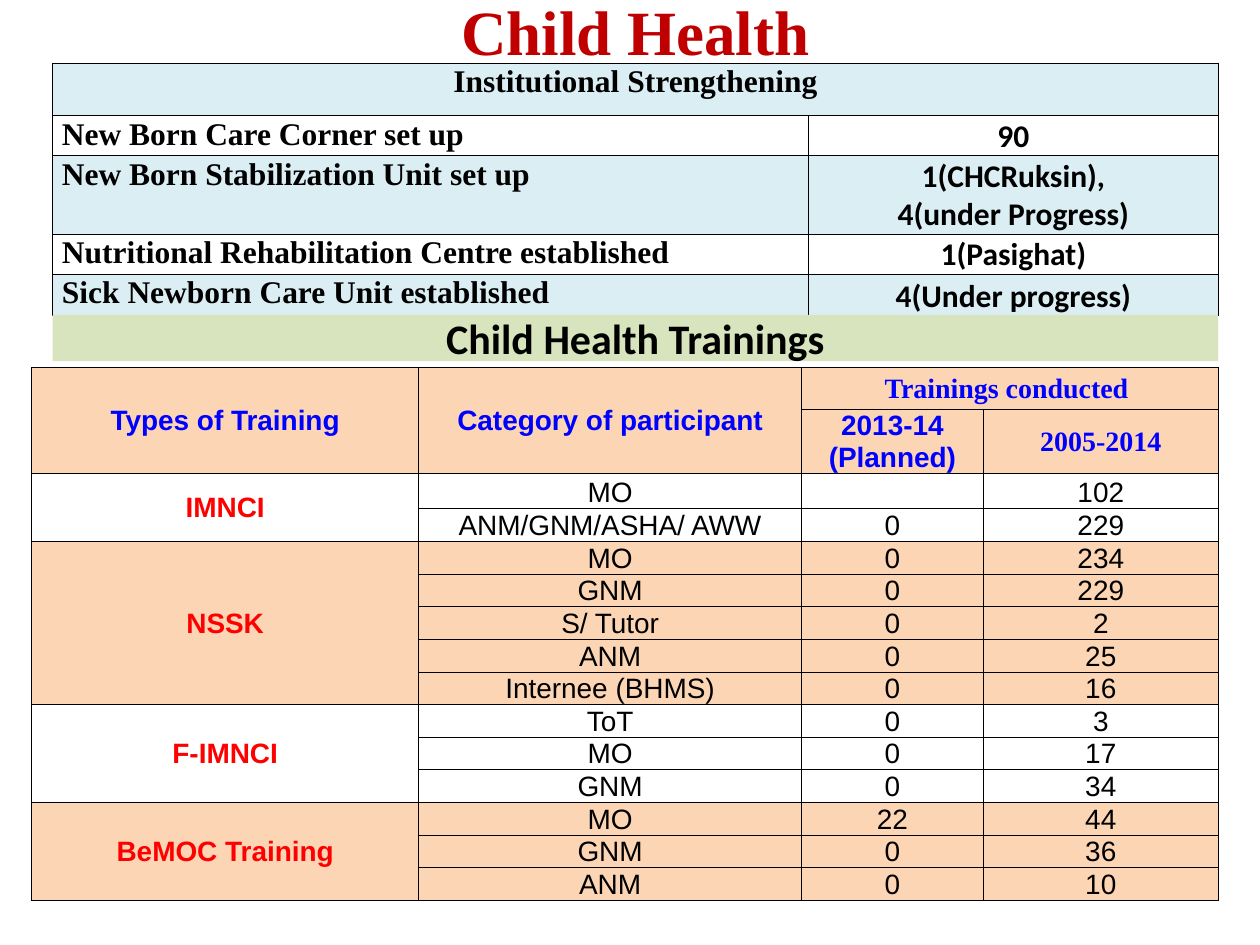
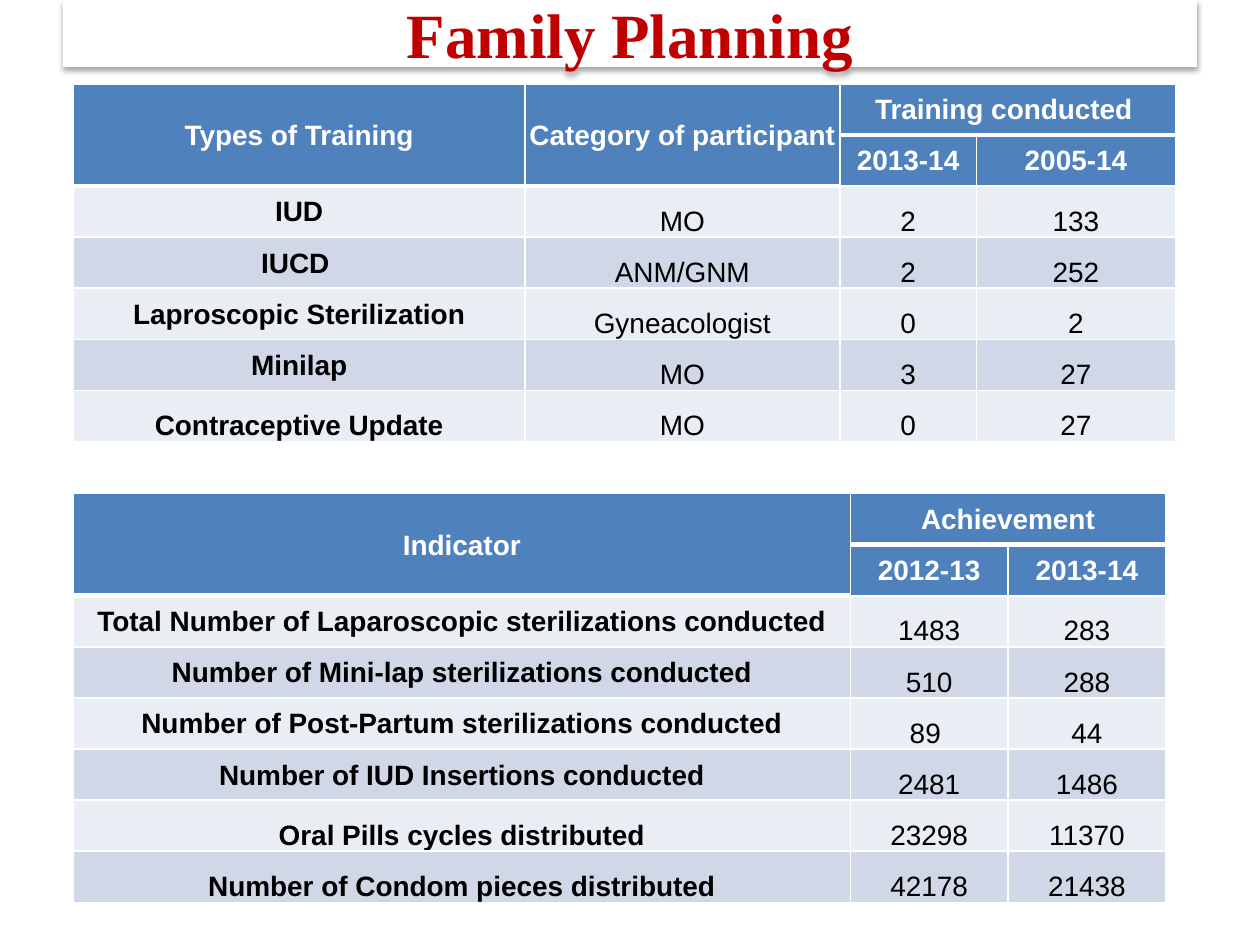
from dataclasses import dataclass, replace

from lxml import etree
from pptx import Presentation
from pptx import util as u
from pptx.dml.color import RGBColor
from pptx.enum import shapes, text
from pptx.oxml.ns import qn

MID, LOW, TOP = text.MSO_ANCHOR.MIDDLE, text.MSO_ANCHOR.BOTTOM, text.MSO_ANCHOR.TOP
LEFT, CENTER = text.PP_ALIGN.LEFT, text.PP_ALIGN.CENTER


class Theme:
    serif, sans, body = "Times New Roman", "Arial", "Calibri"
    white, black, title = "FFFFFF", "000000", "C00000"
    blue, red = "0000FF", "FF0000"
    ice, peach, green = "DBEEF4", "FCD5B5", "D7E4BD"
    head, light, dark = "4F81BD", "E9EDF4", "D0D8E8"
    title_size, band_size, unit_size, cell_size = 36, 24, 18, 16
    thin, fine, thick = 0.5, 1, 3


@dataclass
class Look:
    font: str = Theme.sans
    size: int = Theme.cell_size
    color: str = Theme.black
    bold: bool = False
    align: int = CENTER
    anchor: int = LOW
    fill: str = None


def write(frame, words, look):
    frame.text = words
    frame.word_wrap = True
    frame.vertical_anchor = look.anchor
    for para in frame.paragraphs:
        para.alignment = look.align
        for run in para.runs:
            font = run.font
            font.name, font.size, font.bold = look.font, u.Pt(look.size), look.bold
            font.color.rgb = RGBColor.from_string(look.color)
        if not para.runs:  # keeps an empty cell from stretching its row
            etree.SubElement(para._p, qn("a:endParaRPr"), sz=str(look.size * 100))


def paint(fill, color):
    if color:
        fill.solid()
        fill.fore_color.rgb = RGBColor.from_string(color)
    else:
        fill.background()


def edge(cell, color, width, base):
    """Draw the four cell borders, the lower one with its own width."""
    props = cell._tc.get_or_add_tcPr()
    for spot, side in enumerate(("lnL", "lnR", "lnT", "lnB")):
        size = base if side == "lnB" else width
        line = etree.Element(qn("a:" + side), w=str(u.Pt(size)))
        solid = etree.SubElement(line, qn("a:solidFill"))
        etree.SubElement(solid, qn("a:srgbClr"), val=color)
        props.insert(spot, line)


def bar(slide, box, words, look):
    left, top, width, height = map(u.Cm, box)
    shape = slide.shapes.add_shape(shapes.MSO_SHAPE.RECTANGLE, left, top, width, height)
    shape.shadow.inherit = False
    shape.line.fill.background()
    paint(shape.fill, look.fill)
    write(shape.text_frame, words, look)
    return shape


def title(slide, box, words):
    return bar(slide, box, words, Look(Theme.serif, Theme.title_size, Theme.title,
                                       True, anchor=MID, fill=Theme.white))


def shade(shape):
    """Give the shape a soft shadow below it."""
    effects = shape._element.spPr.find(qn("a:effectLst"))
    outer = etree.SubElement(effects, qn("a:outerShdw"), blurRad=str(u.Pt(3.1)),
                             dist=str(u.Pt(1.8)), dir="5400000", rotWithShape="0")
    color = etree.SubElement(outer, qn("a:srgbClr"), val=Theme.black)
    etree.SubElement(color, qn("a:alpha"), val="35000")


def grid(slide, spot, cols, rows, data, spans, pick, line):
    """Build a table; pick(row, col) gives the Look, line(row) gives the border."""
    left, top = map(u.Cm, spot)
    table = slide.shapes.add_table(len(rows), len(cols), left, top,
                                   u.Cm(sum(cols)), u.Cm(sum(rows))).table
    table.first_row = table.horz_banding = False
    for col, width in zip(table.columns, cols):
        col.width = u.Cm(width)
    for row, height in zip(table.rows, rows):
        row.height = u.Cm(height)
    for r, words in enumerate(data):
        for c, word in enumerate(words):
            cell, look = table.cell(r, c), pick(r, c)
            write(cell.text_frame, word, look)
            cell.vertical_anchor = look.anchor
            cell.margin_left = cell.margin_right = cell.margin_top = u.Cm(0.03)
            cell.margin_bottom = 0
            paint(cell.fill, look.fill)
            edge(cell, *line(r))
    for r, c, high, wide in spans:
        table.cell(r, c).merge(table.cell(r + high - 1, c + wide - 1))


def black_line(row):
    return Theme.black, Theme.thin, Theme.thin


def white_line(row):
    return Theme.white, Theme.fine, Theme.fine if row else Theme.thick


def units(slide, spot):
    data = [
        ("Institutional Strengthening", ""),
        (" New Born Care Corner set up", "90"),
        (" New Born Stabilization Unit set up", "1(CHCRuksin),\v4(under Progress)"),
        (" Nutritional Rehabilitation Centre established", "1(Pasighat)"),
        (" Sick Newborn Care Unit established", "4(Under progress)"),
    ]

    def pick(row, col):
        look = Look(Theme.serif, Theme.unit_size, bold=True, anchor=TOP,
                    fill=None if row % 2 else Theme.ice)
        if row and col:
            return replace(look, font=Theme.body, anchor=LOW)
        return replace(look, align=LEFT) if row else look

    grid(slide, spot, [15.24, 8.26], [1.06, 0.79, 1.58, 0.79, 0.84],
         data, [(0, 0, 1, 2)], pick, black_line)


def courses(slide, spot):
    groups = [
        ("IMNCI", [("MO", "", "102"), ("ANM/GNM/ASHA/ AWW", "0", "229")]),
        ("NSSK", [("MO", "0", "234"), ("GNM", "0", "229"), ("S/ Tutor", "0", "2"),
                  ("ANM", "0", "25"), ("Internee (BHMS)", "0", "16")]),
        ("F-IMNCI", [("ToT", "0", "3"), ("MO", "0", "17"), ("GNM", "0", "34")]),
        ("BeMOC Training", [("MO", "22", "44"), ("GNM", "0", "36"), ("ANM", "0", "10")]),
    ]
    data = [("Types of Training", "Category of participant", "Trainings conducted ", ""),
            ("", "", "2013-14 (Planned)", "2005-2014")]
    spans = [(0, 0, 2, 1), (0, 1, 2, 1), (0, 2, 1, 2)]
    fills = [Theme.peach] * 2
    for n, (name, lines) in enumerate(groups):
        spans.append((len(data), 0, len(lines), 1))
        fills += [Theme.peach if n % 2 else None] * len(lines)
        data += [("" if k else name, *line) for k, line in enumerate(lines)]

    def pick(row, col):
        look = Look(fill=fills[row])
        if row < 2:
            serif = (row, col) in ((0, 2), (1, 3))
            return replace(look, font=Theme.serif if serif else Theme.sans,
                           color=Theme.blue, bold=True, anchor=MID)
        return look if col else replace(look, color=Theme.red, bold=True, anchor=MID)

    grid(slide, spot, [7.8, 7.72, 3.66, 4.74], [0.84, 1.27] + [0.64] * (len(data) - 2),
         data, spans, pick, black_line)


def sheet(slide, spot, cols, data, spans, low):
    """Blue-headed table; the labels of the last `low` rows sit at the bottom."""
    count = len(data)

    def pick(row, col):
        if row < 2:
            return Look(color=Theme.white, bold=True, anchor=MID, fill=Theme.head)
        look = Look(fill=Theme.dark if row % 2 else Theme.light)
        if col:
            return look
        return replace(look, bold=True, anchor=MID if row < count - low else LOW)

    grid(slide, spot, cols, [1.03] * count, data, spans, pick, white_line)


def child(slide):
    title(slide, (1.06, 0.2, 23.5, 0.84), "Child Health")
    units(slide, (1.06, 1.27))
    courses(slide, (0.64, 7.41))
    bar(slide, (1.06, 6.35, 23.5, 0.93), "Child Health Trainings",
        Look(Theme.body, Theme.band_size, bold=True, anchor=MID, fill=Theme.green))


def family(slide):
    shade(title(slide, (1.27, 0, 22.86, 1.35), "Family Planning"))
    sheet(slide, (1.48, 1.69), [9.1, 6.35, 2.75, 4.02], [
        ("Types of Training", "Category of participant", "Training conducted ", ""),
        ("", "", "2013-14", "2005-14"),
        ("IUD", "MO", "2", "133"),
        ("IUCD ", "ANM/GNM", "2", "252"),
        ("Laproscopic Sterilization", "Gyneacologist", "0", "2"),
        ("Minilap", "MO", "3", "27"),
        ("Contraceptive Update", "MO", "0", "27"),
    ], [(0, 0, 2, 1), (0, 1, 2, 1), (0, 2, 1, 2)], low=1)
    sheet(slide, (1.48, 9.95), [15.66, 3.18, 3.18], [
        ("Indicator", "Achievement", ""),
        ("", "2012-13", "2013-14"),
        ("Total Number of Laparoscopic sterilizations conducted", "1483", "283"),
        ("Number of Mini-lap sterilizations conducted", "510", "288"),
        ("Number of Post-Partum sterilizations conducted", "89 ", "44"),
        ("Number of IUD Insertions conducted", "2481", "1486"),
        ("Oral Pills cycles distributed", "23298", "11370"),
        ("Number of Condom pieces distributed", "42178", "21438"),
    ], [(0, 0, 2, 1), (0, 1, 1, 2)], low=2)


def main():
    deck = Presentation()
    deck.slide_width, deck.slide_height = u.Cm(25.4), u.Cm(19.05)
    for build in (child, family):
        build(deck.slides.add_slide(deck.slide_layouts[6]))
    deck.save("out.pptx")


if __name__ == "__main__":
    main()
